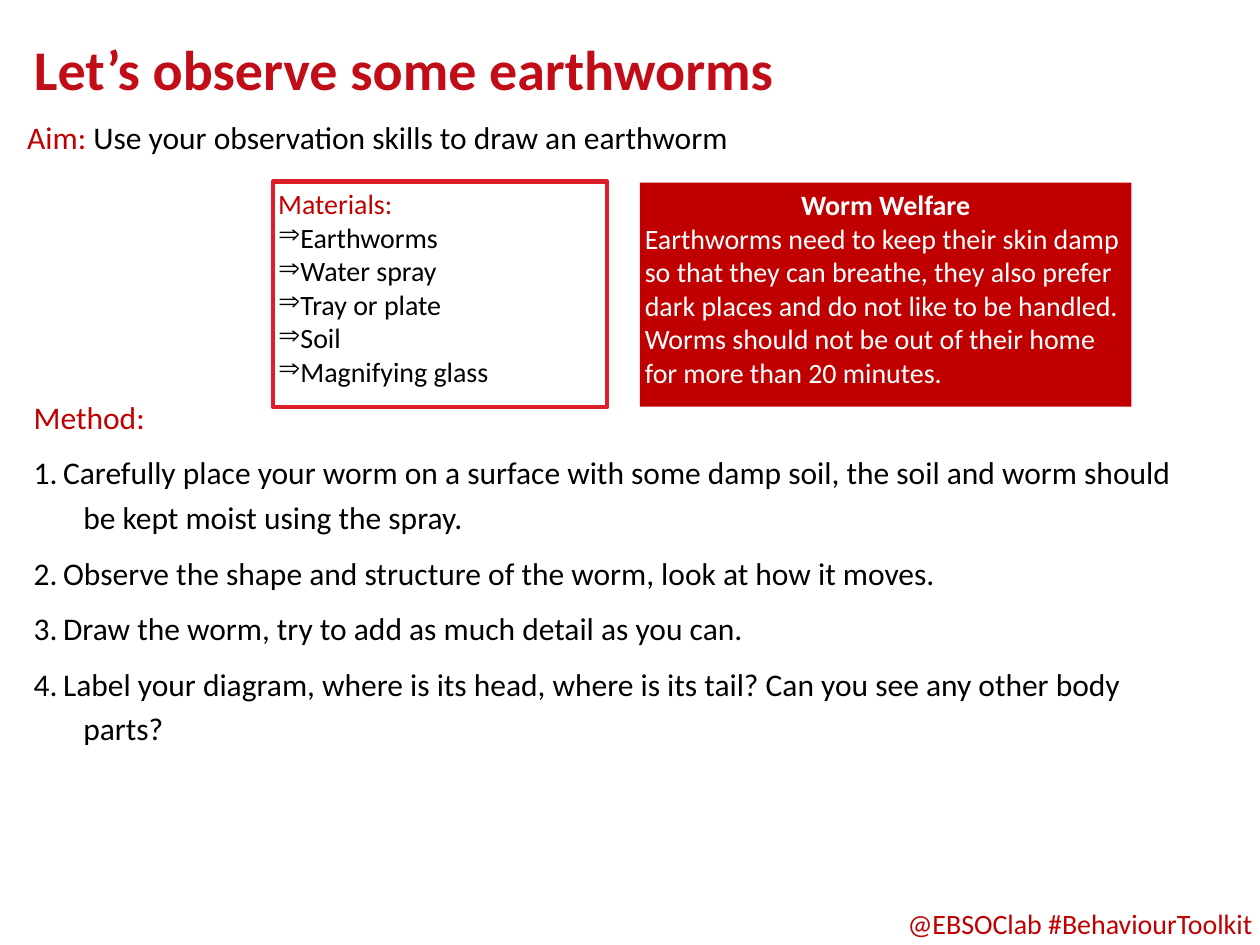
"""Build the earthworm observation worksheet slide."""
from dataclasses import dataclass

from lxml.etree import SubElement
from pptx import Presentation
from pptx.dml.color import RGBColor
from pptx.enum.shapes import MSO_SHAPE
from pptx.enum.text import MSO_ANCHOR, PP_ALIGN
from pptx.oxml.ns import qn
from pptx.util import Cm, Pt

FONT = "Calibri"
RED = RGBColor(0xC0, 0x00, 0x00)
TITLE_RED = RGBColor(0xC1, 0x0D, 0x18)
BORDER_RED = RGBColor(0xDA, 0x1F, 0x28)
BLACK = RGBColor(0x00, 0x00, 0x00)
WHITE = RGBColor(0xFF, 0xFF, 0xFF)

MATERIALS = ["Earthworms", "Water spray", "Tray or plate", "Soil", "Magnifying glass"]
WELFARE = (
    "Earthworms need to keep their skin damp so that they can breathe, "
    "they also prefer dark places and do not like to be handled. "
    "Worms should not be out of their home for more than 20 minutes."
)
STEPS = [
    "Carefully place your worm on a surface with some damp soil, "
    "the soil and worm should be kept moist using the spray.",
    "Observe the shape and structure of the worm, look at how it moves.",
    "Draw the worm, try to add as much detail as you can.",
    "Label your diagram, where is its head, where is its tail? "
    "Can you see any other body parts?",
]


@dataclass(frozen=True)
class Area:
    """Place and size in centimetres."""

    left: float
    top: float
    width: float
    height: float

    def lengths(self) -> tuple:
        """Return the four lengths for python-pptx."""
        return Cm(self.left), Cm(self.top), Cm(self.width), Cm(self.height)


def add_run(paragraph, text: str, *, size: float = 18, color=BLACK, bold=False) -> None:
    """Append formatted text to a paragraph."""
    run = paragraph.add_run()
    run.text = text
    run.font.name = FONT
    run.font.size = Pt(size)
    run.font.bold = bold
    run.font.color.rgb = color


def next_paragraph(frame, align=PP_ALIGN.LEFT):
    """Return the unused first paragraph or a new one."""
    first = frame.paragraphs[0]
    paragraph = frame.add_paragraph() if first.runs else first
    paragraph.alignment = align
    return paragraph


def add_spaced_paragraph(frame, hanging: float = 0):
    """Start a paragraph of the aim or method text."""
    paragraph = next_paragraph(frame)
    paragraph.line_spacing = 1.19
    paragraph.space_after = Pt(6)
    if hanging:
        properties = paragraph._p.get_or_add_pPr()
        properties.set("marL", str(Cm(hanging)))
        properties.set("indent", str(-Cm(hanging)))
    return paragraph


def add_bullet(paragraph, symbol: str) -> None:
    """Give a paragraph a bullet symbol."""
    SubElement(paragraph._p.get_or_add_pPr(), qn("a:buChar"), char=symbol)


def add_text_area(slide, area: Area):
    """Add a wrapping text box and return its frame."""
    frame = slide.shapes.add_textbox(*area.lengths()).text_frame
    frame.word_wrap = True
    return frame


def add_panel(slide, area: Area, fill: RGBColor, border: RGBColor | None = None):
    """Add a filled rectangle and return its frame."""
    panel = slide.shapes.add_shape(MSO_SHAPE.RECTANGLE, *area.lengths())
    panel.shadow.inherit = False
    panel.fill.solid()
    panel.fill.fore_color.rgb = fill
    if border is None:
        panel.line.fill.background()
    else:
        panel.line.color.rgb = border
        panel.line.width = Pt(2.5)
    frame = panel.text_frame
    frame.word_wrap = True
    frame.vertical_anchor = MSO_ANCHOR.TOP
    frame.margin_left = frame.margin_right = Cm(0.1)
    frame.margin_top = frame.margin_bottom = Cm(0.1)
    return frame


def add_title(slide, area: Area, text: str) -> None:
    """Place and fill the title placeholder."""
    title = slide.shapes.title
    title.left, title.top, title.width, title.height = area.lengths()
    title.text_frame.word_wrap = True
    title.text_frame.vertical_anchor = MSO_ANCHOR.MIDDLE
    add_run(next_paragraph(title.text_frame), text, size=32, color=TITLE_RED, bold=True)


def main() -> None:
    """Compose and save the slide."""
    presentation = Presentation()
    presentation.slide_width, presentation.slide_height = Cm(25.4), Cm(19.05)
    slide = presentation.slides.add_slide(presentation.slide_layouts[5])

    add_title(slide, Area(0.43, 0.48, 23.04, 1.8), "Let’s observe some earthworms")

    aim = add_spaced_paragraph(add_text_area(slide, Area(0.3, 2.11, 17.58, 1.17)))
    add_run(aim, "Aim: ", color=RED)
    add_run(aim, "Use your observation skills to draw an earthworm")

    welfare = add_panel(slide, Area(12.9, 3.68, 9.91, 4.52), RED)
    add_run(next_paragraph(welfare, PP_ALIGN.CENTER), "Worm Welfare",
            size=16, color=WHITE, bold=True)
    add_run(next_paragraph(welfare), WELFARE, size=16, color=WHITE)

    materials = add_panel(slide, Area(5.51, 3.66, 6.73, 4.55), WHITE, BORDER_RED)
    add_run(next_paragraph(materials), "Materials:", size=16, color=RED)
    for material in MATERIALS:
        item = next_paragraph(materials)
        add_bullet(item, "⇒")
        add_run(item, material, size=16)

    method = add_text_area(slide, Area(0.43, 7.75, 23.93, 8.46))
    add_run(add_spaced_paragraph(method), "Method:", color=RED)
    for number, instruction in enumerate(STEPS, start=1):
        step = add_spaced_paragraph(method, hanging=1)
        add_run(step, f"{number}.")
        add_run(step, " ", size=14)
        add_run(step, instruction)

    hashtag = add_text_area(slide, Area(16.41, 18.16, 9.09, 0.94))
    add_run(next_paragraph(hashtag, PP_ALIGN.RIGHT), "@EBSOClab #BehaviourToolkit",
            size=16, color=RED)

    presentation.save("out.pptx")


if __name__ == "__main__":
    main()
